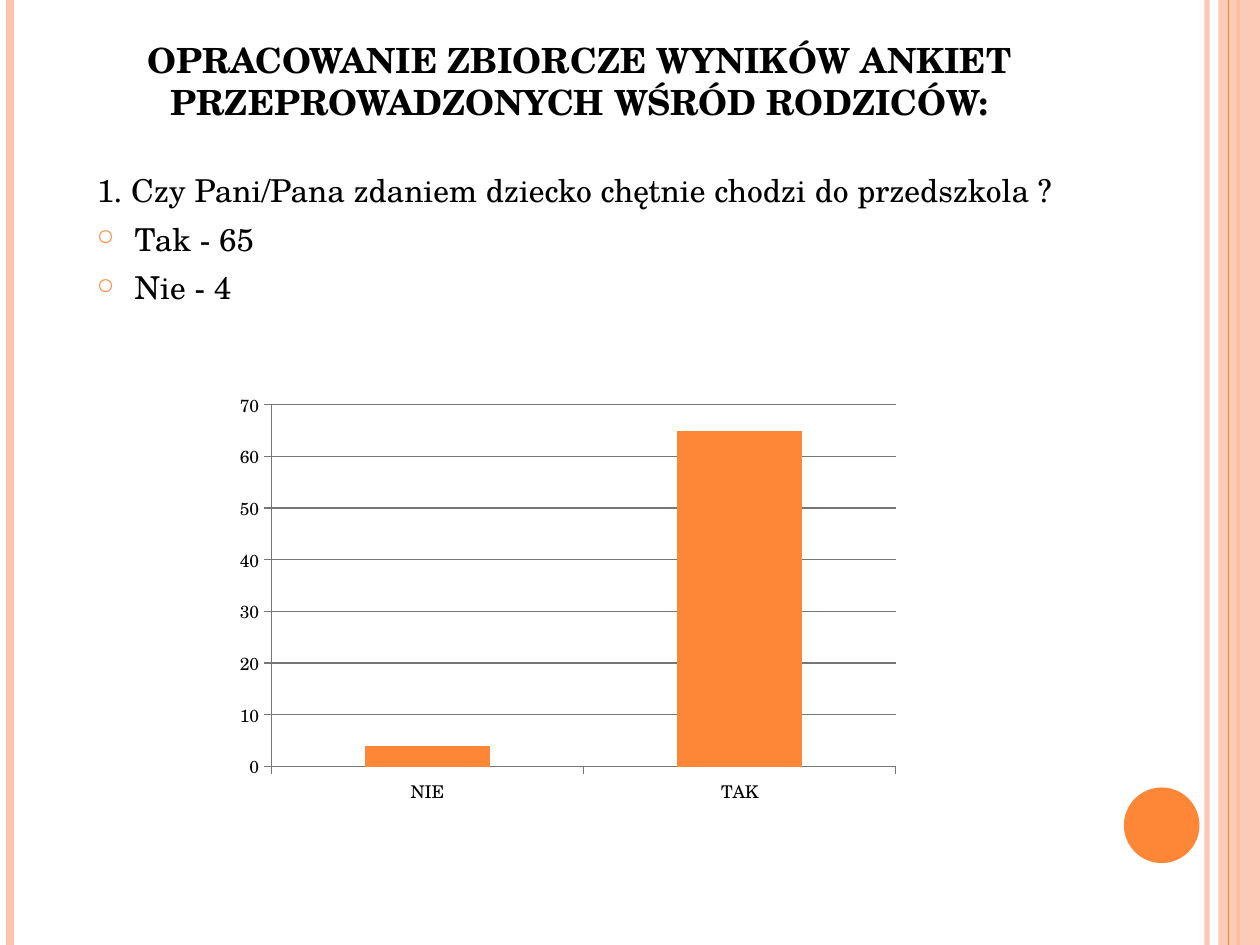
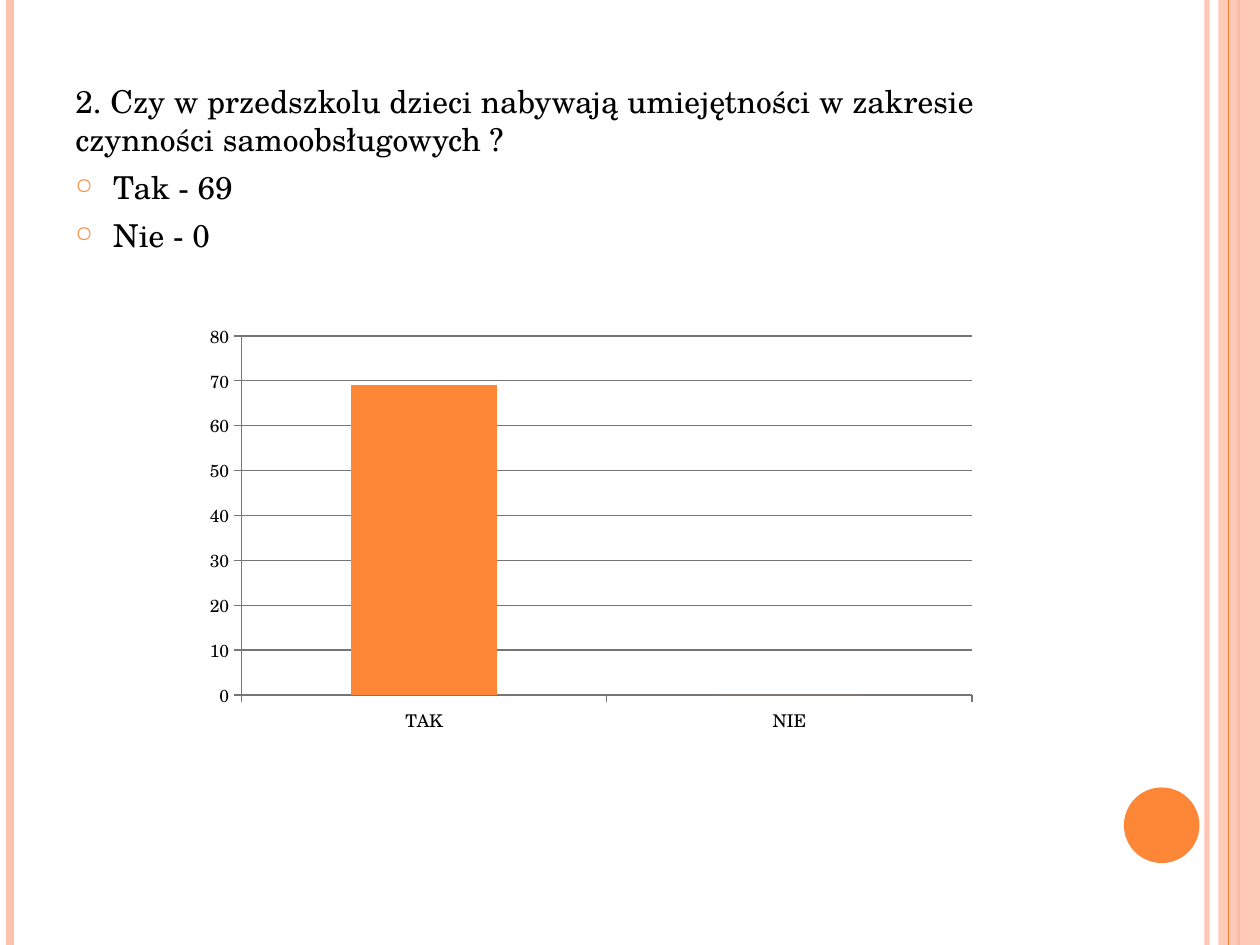
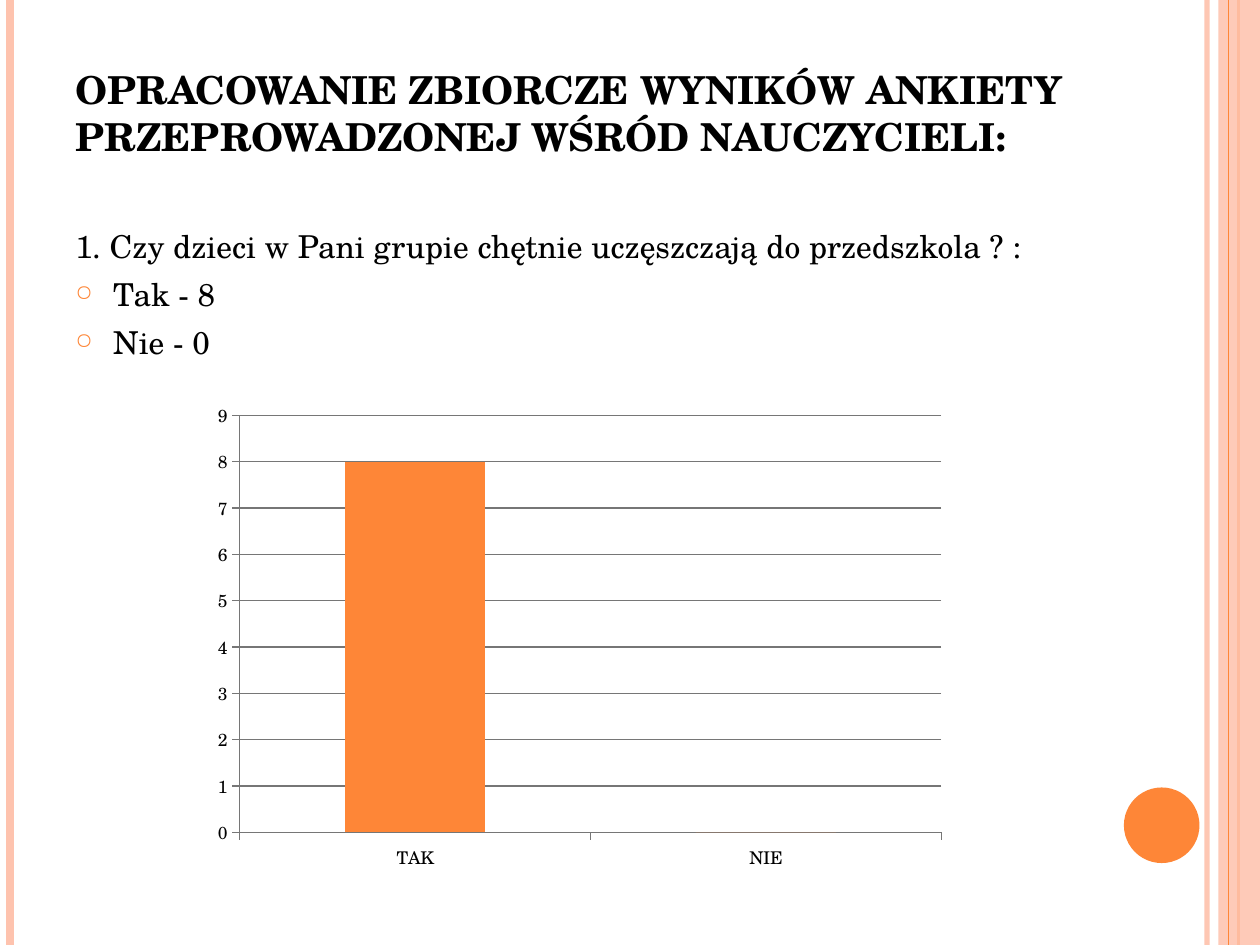
from lxml import etree
from pptx import Presentation
from pptx.chart.data import CategoryChartData
from pptx.dml.color import RGBColor
from pptx.enum.chart import XL_CHART_TYPE, XL_TICK_MARK
from pptx.enum.shapes import MSO_CONNECTOR, MSO_SHAPE
from pptx.enum.text import MSO_ANCHOR, MSO_AUTO_SIZE, PP_ALIGN
from pptx.oxml.ns import qn
from pptx.util import Inches, Pt

STACKED = XL_CHART_TYPE.COLUMN_STACKED
TICK_OUTSIDE = XL_TICK_MARK.OUTSIDE
STRAIGHT = MSO_CONNECTOR.STRAIGHT
RECTANGLE, OVAL = MSO_SHAPE.RECTANGLE, MSO_SHAPE.OVAL
BOTTOM = MSO_ANCHOR.BOTTOM
NO_AUTOFIT = MSO_AUTO_SIZE.NONE
LEFT, CENTER = PP_ALIGN.LEFT, PP_ALIGN.CENTER

FONT = "TeX Gyre Schola"
COLORS = {"accent": "FE8637", "peach": "FEC3AE", "text": "000000", "axis": "767676"}
TITLE_ONLY, BLANK = 5, 6
SLIDE_WIDTH, SLIDE_HEIGHT = 10, 7.5


def rgb(name):
    """Return the named colour."""
    return RGBColor.from_string(COLORS[name])


def box(*lengths):
    """Convert left, top, width and height to lengths."""
    return [Inches(length) for length in lengths]


def style_font(font, size, bold=False):
    """Apply the shared typeface and text colour."""
    font.name = FONT
    font.size = Pt(size)
    font.bold = bold
    font.color.rgb = rgb("text")


def set_opacity(element, percent):
    """Make the colour of an element partly transparent."""
    for color in element.iter(qn("a:srgbClr")):
        etree.SubElement(color, qn("a:alpha"), val=str(percent * 1000))


def add_stripe(slide, x, color, width, opacity=100):
    """Draw a vertical line over the full slide height."""
    stripe = slide.shapes.add_connector(
        STRAIGHT, Inches(x), 0, Inches(x), Inches(SLIDE_HEIGHT))
    stripe.line.color.rgb = rgb(color)
    stripe.line.width = Pt(width)
    if opacity < 100:
        set_opacity(stripe.element, opacity)
    etree.SubElement(stripe.element.spPr, qn("a:effectLst"))


def add_filled(slide, kind, place, color, opacity=100):
    """Draw a plain filled shape without outline."""
    filled = slide.shapes.add_shape(kind, *box(*place))
    filled.shadow.inherit = False
    filled.fill.solid()
    filled.fill.fore_color.rgb = rgb(color)
    filled.line.fill.background()
    if opacity < 100:
        set_opacity(filled.element, opacity)


def add_frame(slide):
    """Draw the stripes, side band and circle that all slides share."""
    add_stripe(slide, 9.58, "peach", 3, 93)
    add_stripe(slide, 0.08, "peach", 4.5)
    add_stripe(slide, 9.83, "accent", 1.5)
    add_filled(slide, RECTANGLE, (9.67, 0, 0.33, SLIDE_HEIGHT), "peach", 87)
    add_stripe(slide, 9.75, "accent", 0.75)
    add_filled(slide, OVAL, (8.92, 6.25, 0.6, 0.6), "accent")


def set_title(slide, text, place, size, align=LEFT, bottom_inset=0.05):
    """Move, fill and format the title placeholder."""
    title = slide.shapes.title
    title.left, title.top, title.width, title.height = box(*place)
    frame = title.text_frame
    frame.word_wrap = True
    frame.auto_size = NO_AUTOFIT
    frame.vertical_anchor = BOTTOM
    frame.margin_bottom = Inches(bottom_inset)
    paragraph = frame.paragraphs[0]
    paragraph.alignment = align
    run = paragraph.add_run()
    run.text = text
    style_font(run.font, size, bold=True)


def add_bullet(paragraph):
    """Give a paragraph a hanging ring bullet."""
    properties = paragraph._p.get_or_add_pPr()
    properties.set("marL", str(Inches(0.3)))
    properties.set("indent", str(-Inches(0.3)))
    color = etree.SubElement(properties, qn("a:buClr"))
    etree.SubElement(color, qn("a:srgbClr"), val=COLORS["accent"])
    etree.SubElement(properties, qn("a:buSzPct"), val="70000")
    etree.SubElement(properties, qn("a:buChar"), char="○")


def add_question(slide, question, answers, place):
    """Write a question followed by its bulleted answers."""
    frame = slide.shapes.add_textbox(*box(*place)).text_frame
    frame.word_wrap = True
    for index, text in enumerate([question, *answers]):
        paragraph = frame.add_paragraph() if index else frame.paragraphs[0]
        paragraph.space_before = Pt(6)
        if index:
            add_bullet(paragraph)
        run = paragraph.add_run()
        run.text = text
        style_font(run.font, 18)


def set_plot_area(chart, place):
    """Fix the inner plot area as fractions of the chart."""
    plot_area = chart.element.find(".//" + qn("c:plotArea"))
    for automatic in plot_area.findall(qn("c:layout")):
        plot_area.remove(automatic)
    layout = etree.Element(qn("c:layout"))
    manual = etree.SubElement(layout, qn("c:manualLayout"))
    settings = [("layoutTarget", "inner"), ("xMode", "edge"), ("yMode", "edge"),
                *zip("xywh", place)]
    for tag, value in settings:
        etree.SubElement(manual, qn("c:" + tag), val=str(value))
    plot_area.insert(0, layout)


def add_answer_chart(slide, counts, place, plot_place=None):
    """Chart the number of answers as columns."""
    data = CategoryChartData()
    data.categories = list(counts)
    data.add_series("Series 1", list(counts.values()))
    chart = slide.shapes.add_chart(STACKED, *box(*place), data).chart
    chart.has_legend = False
    chart.has_title = False
    style_font(chart.font, 10)
    columns = chart.plots[0]
    columns.vary_by_categories = False
    columns.gap_width = 150
    columns.overlap = 100
    fill = columns.series[0].format.fill
    fill.solid()
    fill.fore_color.rgb = rgb("accent")
    chart.value_axis.has_major_gridlines = True
    for axis in (chart.category_axis, chart.value_axis):
        axis.major_tick_mark = TICK_OUTSIDE
    for ruled in (chart.category_axis, chart.value_axis,
                  chart.value_axis.major_gridlines):
        ruled.format.line.color.rgb = rgb("axis")
        ruled.format.line.width = Pt(0.75)
    if plot_place:
        set_plot_area(chart, plot_place)


def add_slide(deck, layout):
    """Add a slide with the shared frame."""
    slide = deck.slides.add_slide(deck.slide_layouts[layout])
    add_frame(slide)
    return slide


def main():
    """Build the survey slides."""
    deck = Presentation()
    deck.slide_width, deck.slide_height = Inches(SLIDE_WIDTH), Inches(SLIDE_HEIGHT)

    parents = add_slide(deck, TITLE_ONLY)
    set_title(parents,
              "OPRACOWANIE ZBIORCZE WYNIKÓW ANKIET PRZEPROWADZONYCH WŚRÓD RODZICÓW:",
              (0.51, 0.29, 8.17, 1.18), 19.8, CENTER, bottom_inset=0.5)
    add_question(parents,
                 "1. Czy Pani/Pana zdaniem dziecko chętnie chodzi do przedszkola ?",
                 ["Tak - 65", "Nie - 4"], (0.67, 1.31, 8.17, 5.75))
    add_answer_chart(parents, {"NIE": 4, "TAK": 65}, (1.69, 3.04, 6.61, 3.46),
                     (0.07, 0.05, 0.75, 0.83))

    self_care = add_slide(deck, BLANK)
    add_question(self_care,
                 "2. Czy w przedszkolu dzieci nabywają umiejętności w zakresie "
                 "czynności samoobsługowych ?",
                 ["Tak - 69", "Nie - 0"], (0.5, 0.6, 8.17, 6.48))
    add_answer_chart(self_care, {"TAK": 69, "NIE": 0}, (1.54, 2.5, 6.3, 3.38))

    teachers = add_slide(deck, TITLE_ONLY)
    set_title(teachers,
              "OPRACOWANIE ZBIORCZE WYNIKÓW ANKIETY PRZEPROWADZONEJ WŚRÓD NAUCZYCIELI:",
              (0.5, 0.3, 8.17, 1.01), 22)
    add_question(teachers,
                 "1. Czy dzieci w Pani grupie chętnie uczęszczają do przedszkola ? :",
                 ["Tak - 8", "Nie - 0"], (0.5, 1.75, 8.17, 5.33))
    add_answer_chart(teachers, {"TAK": 8, "NIE": 0}, (1.61, 3.12, 5.98, 3.86))

    deck.save("out.pptx")


if __name__ == "__main__":
    main()
